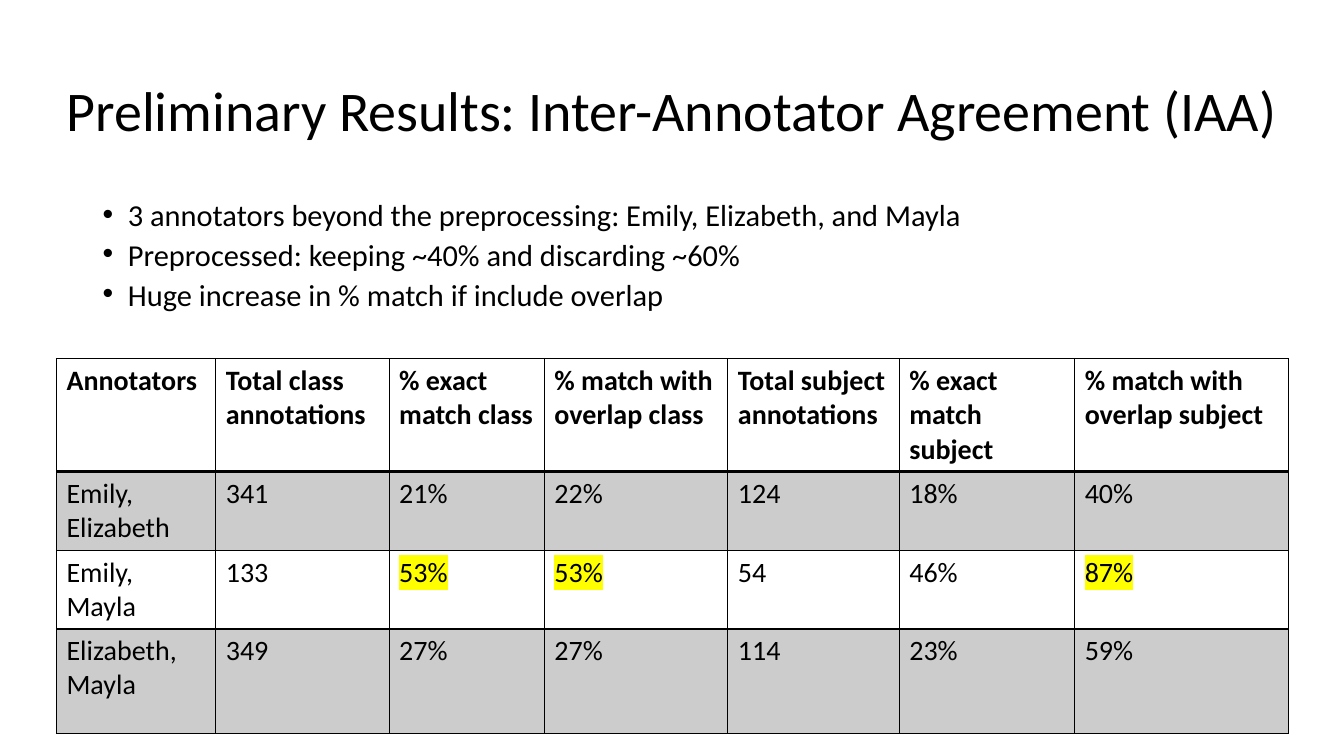
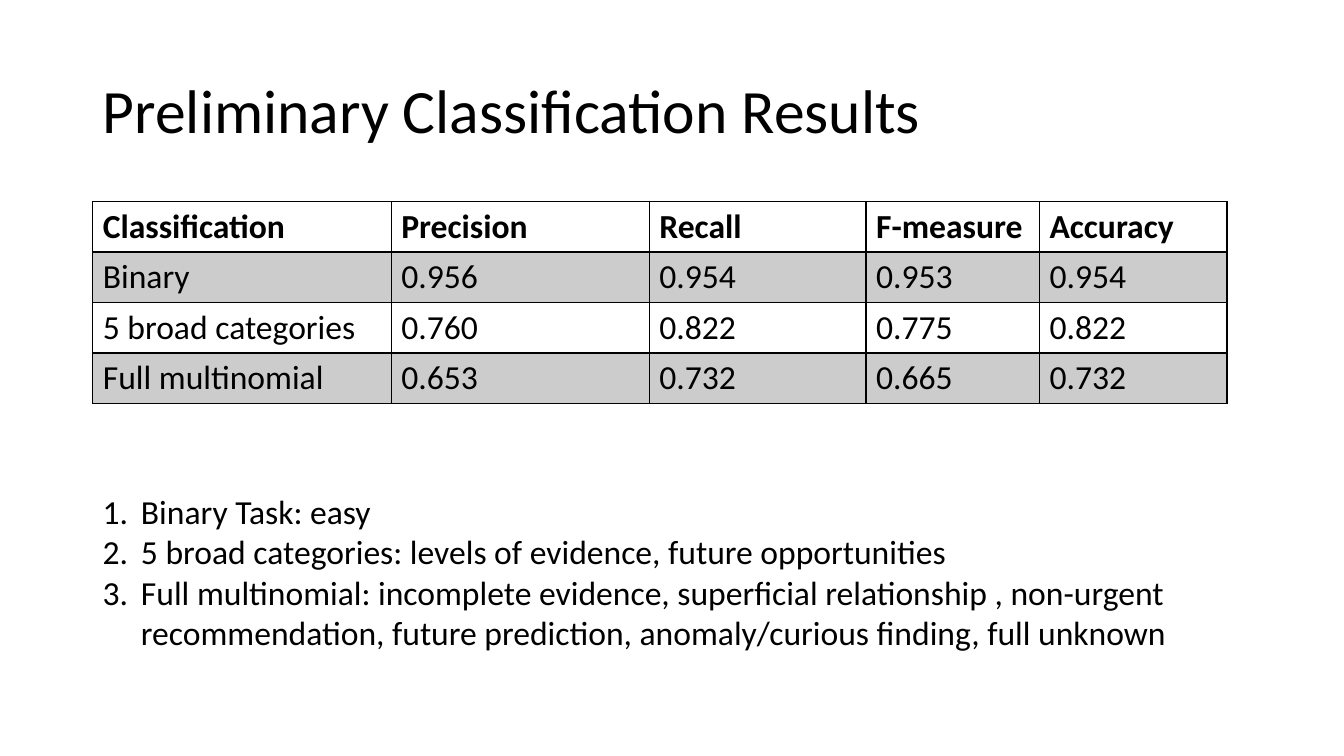
from dataclasses import dataclass

from lxml import etree
from pptx import Presentation
from pptx.dml.color import RGBColor
from pptx.enum.text import MSO_ANCHOR, MSO_AUTO_SIZE, PP_ALIGN
from pptx.oxml.ns import qn
from pptx.util import Inches, Pt

LEFT = PP_ALIGN.LEFT
MIDDLE, TOP = MSO_ANCHOR.MIDDLE, MSO_ANCHOR.TOP
NO_AUTOFIT = MSO_AUTO_SIZE.NONE
TITLE_ONLY = 5


@dataclass(frozen=True)
class Theme:
    font: str = "Calibri"
    ink: str = "000000"
    paper: str = "FFFFFF"
    band: str = "CCCCCC"
    highlight: str = "FFFF00"
    thin_line: float = 1
    header_line: float = 2


THEME = Theme()
TITLE_TOP, TITLE_HEIGHT = 0.4, 1.45

SLIDES = [
    {
        "title": {"text": "Preliminary Results: Inter-Annotator Agreement (IAA)",
                  "left": 0.56, "width": 12.22, "size": 40},
        "list": {
            "box": (0.92, 2, 11.5, 1.16),
            "size": 21.7,
            "indent": 0.25,
            "marker": ("a:buChar", {"char": "•"}),
            "paragraph": {"line_spacing": 0.7, "space_before": Pt(10)},
            "items": [
                "3 annotators beyond the preprocessing: Emily, Elizabeth, and Mayla",
                "Preprocessed: keeping ~40% and discarding ~60%",
                "Huge increase in % match if include overlap",
            ],
        },
        "table": {
            "left": 0.56, "top": 3.56, "size": 20,
            "columns": [1.58, 1.72, 1.54, 1.82, 1.7, 1.74, 2.12],
            "heights": [1.12, 0.78, 0.78, 1.04],
            "rows": [
                ["Annotators", "Total class annotations", "% exact match class",
                 "% match with overlap class", "Total subject annotations",
                 "% exact match subject", "% match with overlap subject"],
                ["Emily, Elizabeth", "341", "21%", "22%", "124", "18%", "40%"],
                ["Emily, Mayla", "133", "53%", "53%", "54", "46%", "87%"],
                ["Elizabeth, Mayla", "349", "27%", "27%", "114", "23%", "59%"],
            ],
            "highlighted": {(2, 2), (2, 3), (2, 6)},
        },
    },
    {
        "title": {"text": "Preliminary Classification Results",
                  "left": 0.92, "width": 11.5, "size": 44},
        "table": {
            "left": 0.92, "top": 2, "size": 24,
            "columns": [2.96, 2.56, 2.15, 1.72, 1.86],
            "heights": [0.5] * 4,
            "rows": [
                ["Classification", "Precision", "Recall", "F-measure", "Accuracy"],
                ["Binary", "0.956", "0.954", "0.953", "0.954"],
                ["5 broad categories", "0.760", "0.822", "0.775", "0.822"],
                ["Full multinomial", "0.653", "0.732", "0.665", "0.732"],
            ],
            "highlighted": set(),
        },
        "list": {
            "box": (0.92, 4.82, 11.26, 1.72),
            "size": 24,
            "indent": 0.38,
            "marker": ("a:buAutoNum", {"type": "arabicPeriod"}),
            "paragraph": {},
            "items": [
                "Binary Task: easy",
                "5 broad categories: levels of evidence, future opportunities",
                "Full multinomial: incomplete evidence, superficial relationship , "
                "non-urgent recommendation, future prediction, anomaly/curious finding, "
                "full unknown",
            ],
        },
    },
]


def set_format(target, values):
    for name, value in values.items():
        setattr(target, name, value)


def write(paragraph, text, size, bold=False):
    run = paragraph.add_run()
    run.text = text
    run.font.fill.solid()
    run.font.color.rgb = RGBColor.from_string(THEME.ink)
    set_format(run.font, {"name": THEME.font, "size": Pt(size), "bold": bold})
    return run


def add_color(parent, tag, color):
    holder = etree.SubElement(parent, qn(tag))
    etree.SubElement(holder, qn("a:srgbClr"), val=color)
    return holder


def highlight(run):
    properties = run.font._element
    mark = add_color(properties, "a:highlight", THEME.highlight)
    properties.find(qn("a:latin")).addprevious(mark)


def set_title(slide, text, left, width, size):
    title = slide.shapes.title
    set_format(title, {"left": Inches(left), "top": Inches(TITLE_TOP),
                       "width": Inches(width), "height": Inches(TITLE_HEIGHT)})
    set_format(title.text_frame, {"auto_size": NO_AUTOFIT, "word_wrap": True,
                                  "vertical_anchor": MIDDLE})
    paragraph = title.text_frame.paragraphs[0]
    set_format(paragraph, {"alignment": LEFT, "line_spacing": 0.9})
    write(paragraph, text, size)


def add_list(slide, content):
    box = slide.shapes.add_textbox(*map(Inches, content["box"]))
    frame = box.text_frame
    set_format(frame, {"word_wrap": True, "vertical_anchor": TOP})
    tag, attributes = content["marker"]
    indent = Inches(content["indent"])
    for index, item in enumerate(content["items"]):
        paragraph = frame.add_paragraph() if index else frame.paragraphs[0]
        set_format(paragraph, content["paragraph"])
        properties = paragraph._p.get_or_add_pPr()
        properties.set("marL", str(indent))
        properties.set("indent", str(-indent))
        etree.SubElement(properties, qn("a:buFont"), typeface="Arial")
        etree.SubElement(properties, qn(tag), attributes)
        write(paragraph, item, content["size"])


def set_borders(cell, row_index):
    """Draw thin lines all round, with a heavier one below the header row."""
    top = THEME.header_line if row_index == 1 else THEME.thin_line
    bottom = THEME.header_line if row_index == 0 else THEME.thin_line
    widths = {"a:lnL": THEME.thin_line, "a:lnR": THEME.thin_line,
              "a:lnT": top, "a:lnB": bottom}
    properties = cell._tc.get_or_add_tcPr()
    for tag, width in widths.items():
        line = etree.SubElement(properties, qn(tag), w=str(Pt(width)))
        add_color(line, "a:solidFill", THEME.ink)


def add_table(slide, content):
    columns, heights, rows = content["columns"], content["heights"], content["rows"]
    frame = slide.shapes.add_table(
        len(rows), len(columns), Inches(content["left"]), Inches(content["top"]),
        Inches(sum(columns)), Inches(sum(heights)))
    table = frame.table
    set_format(table, {"first_row": False, "horz_banding": False})
    for column, width in zip(table.columns, columns):
        column.width = Inches(width)
    for row_index, (row, height) in enumerate(zip(rows, heights)):
        table.rows[row_index].height = Inches(height)
        fill_color = THEME.band if row_index % 2 else THEME.paper
        for column_index, text in enumerate(row):
            cell = table.cell(row_index, column_index)
            set_borders(cell, row_index)
            cell.fill.solid()
            cell.fill.fore_color.rgb = RGBColor.from_string(fill_color)
            run = write(cell.text_frame.paragraphs[0], text, content["size"],
                        bold=row_index == 0)
            if (row_index, column_index) in content["highlighted"]:
                highlight(run)


def main():
    presentation = Presentation()
    set_format(presentation, {"slide_width": Inches(13.33), "slide_height": Inches(7.5)})
    for content in SLIDES:
        slide = presentation.slides.add_slide(presentation.slide_layouts[TITLE_ONLY])
        set_title(slide, **content["title"])
        add_list(slide, content["list"])
        add_table(slide, content["table"])
    presentation.save("out.pptx")


if __name__ == "__main__":
    main()
